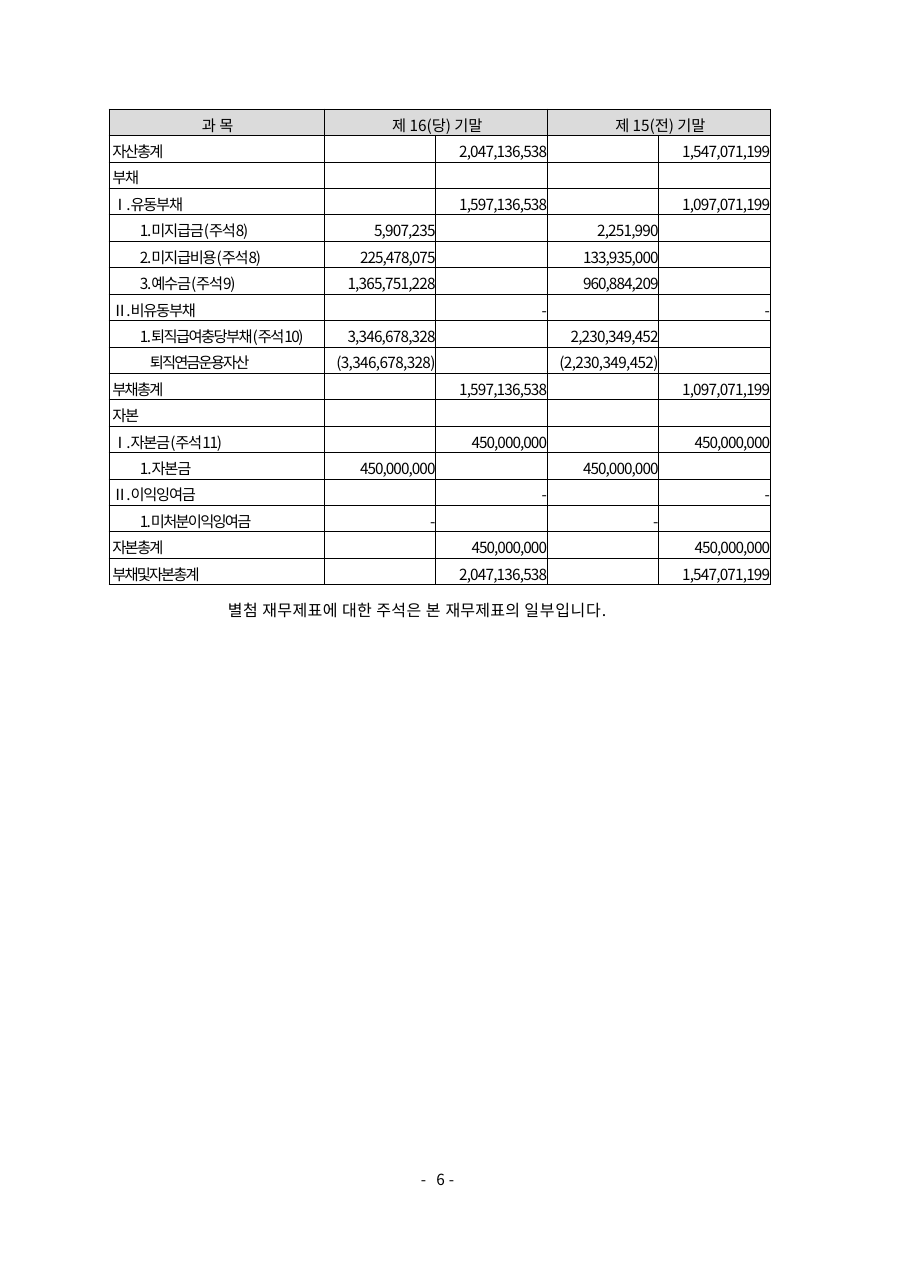
import pptx
import pptx.dml.color
import pptx.enum.text
import pptx.oxml.ns
import pptx.util
import lxml.etree

Inches = pptx.util.Inches
Pt = pptx.util.Pt
Align = pptx.enum.text.PP_ALIGN
qn = pptx.oxml.ns.qn

# Content
FONT = "Noto Sans CJK KR"
BLACK = pptx.dml.color.RGBColor(0x00, 0x00, 0x00)
HEADER_GREY = pptx.dml.color.RGBColor(0xDB, 0xDB, 0xDB)

ACCOUNT_HEADING = "과 목"
PERIODS = [("6", "당"), ("5", "전")]

# Indent of each account level, in inches
TOTAL, ITEM, OFFSET = 0.03, 0.28, 0.37

# Account, level, letter spacing, current period, prior period
ACCOUNTS = [
    ("자산총계", TOTAL, -1.1, "2,047,136,538", "1,547,071,199"),
    ("부채", TOTAL, -0.8, "", ""),
    ("Ⅰ.유동부채", TOTAL, -0.8, "1,597,136,538", "1,097,071,199"),
    ("1.미지급금(주석8)", ITEM, -0.8, "5,907,235", "2,251,990"),
    ("2.미지급비용(주석8)", ITEM, -0.8, "225,478,075", "133,935,000"),
    ("3.예수금(주석9)", ITEM, -0.8, "1,365,751,228", "960,884,209"),
    ("Ⅱ.비유동부채", TOTAL, -0.8, "-", "-"),
    ("1.퇴직급여충당부채(주석10)", ITEM, -1, "3,346,678,328", "2,230,349,452"),
    ("퇴직연금운용자산", OFFSET, -1.2, "(3,346,678,328)", "(2,230,349,452)"),
    ("부채총계", TOTAL, -1.1, "1,597,136,538", "1,097,071,199"),
    ("자본", TOTAL, -0.8, "", ""),
    ("Ⅰ.자본금(주석11)", TOTAL, -0.8, "450,000,000", "450,000,000"),
    ("1.자본금", ITEM, -0.7, "450,000,000", "450,000,000"),
    ("Ⅱ.이익잉여금", TOTAL, -0.8, "-", "-"),
    ("1.미처분이익잉여금", ITEM, -1.1, "-", "-"),
    ("자본총계", TOTAL, -1.1, "450,000,000", "450,000,000"),
    ("부채및자본총계", TOTAL, -1.2, "2,047,136,538", "1,547,071,199"),
]
AMOUNT_SPACING = {1: 0, 11: -0.6, 15: -0.4}  # by length of the amount
USUAL_AMOUNT_SPACING = -0.5

NOTE = [("별첨 재무제표에 대한 주석은 본 ", 0.3), ("재무제표의 ", 0.2), ("일부입니다.", 0.5)]
PAGE_NUMBER = [("- ", 2.2), ("6 ", 0.2), ("-", 2.2)]

# Layout
TABLE_LEFT, TABLE_TOP, TABLE_WIDTH, TABLE_HEIGHT = 0.99, 0.99, 6, 4.32
ACCOUNT_WIDTH = 1.95
AMOUNT_WIDTH = (TABLE_WIDTH - ACCOUNT_WIDTH) / 4
ROW_COUNT = len(ACCOUNTS) + 1
COLUMN_COUNT = 5


def write(para, spans, size=10, indent=0, before=0, align=Align.LEFT):
    para.alignment = align
    para.space_before = Pt(before)
    properties = para._p.get_or_add_pPr()
    properties.set("marL", str(Inches(indent)))
    properties.set("indent", "0")
    for text, spacing in spans:
        span = para.add_run()
        span.text = text
        span.font.size = Pt(size)
        span.font.name = FONT
        span.font.color.rgb = BLACK
        run_properties = span._r.get_or_add_rPr()
        run_properties.set("spc", str(round(spacing * 100)))
        for script in ("a:ea", "a:cs"):
            lxml.etree.SubElement(run_properties, qn(script)).set("typeface", FONT)


def write_cell(cell, spans, indent=0, align=Align.LEFT):
    write(cell.text_frame.paragraphs[0], spans, indent=indent, before=2.7, align=align)


def add_text(page, left, top, width, height, inset_top, spans, size, before):
    box = page.shapes.add_textbox(Inches(left), Inches(top), Inches(width), Inches(height))
    frame = box.text_frame
    frame.word_wrap = True
    frame.auto_size = pptx.enum.text.MSO_AUTO_SIZE.SHAPE_TO_FIT_TEXT
    frame.margin_left = frame.margin_right = frame.margin_bottom = 0
    frame.margin_top = Inches(inset_top)
    write(frame.paragraphs[0], spans, size=size, indent=0.01, before=before)
    return frame.paragraphs[0]


def format_cell(cell, is_header):
    cell.margin_left = cell.margin_right = cell.margin_bottom = 0
    cell.margin_top = Inches(0.04)
    properties = cell._tc.get_or_add_tcPr()
    for side in ("a:lnL", "a:lnR", "a:lnT", "a:lnB"):
        border = lxml.etree.SubElement(properties, qn(side), w=str(Pt(0.5)))
        fill = lxml.etree.SubElement(border, qn("a:solidFill"))
        lxml.etree.SubElement(fill, qn("a:srgbClr"), val=str(BLACK))
    if is_header:
        cell.fill.solid()
        cell.fill.fore_color.rgb = HEADER_GREY
    else:
        cell.fill.background()
    # Keep empty cells as low as filled ones
    paragraph = cell.text_frame.paragraphs[0]._p
    if not cell.text_frame.text:
        lxml.etree.SubElement(paragraph, qn("a:endParaRPr"), sz="1000")


def add_balance_table(page):
    frame = page.shapes.add_table(
        ROW_COUNT, COLUMN_COUNT, Inches(TABLE_LEFT), Inches(TABLE_TOP),
        Inches(TABLE_WIDTH), Inches(TABLE_HEIGHT))
    table = frame.table
    table.first_row = False
    table.horz_banding = False
    for index, column in enumerate(table.columns):
        column.width = Inches(AMOUNT_WIDTH if index else ACCOUNT_WIDTH)
    for row in table.rows:
        row.height = Inches(TABLE_HEIGHT / ROW_COUNT)

    # Header: each period spans a detail and a total column
    write_cell(table.cell(0, 0), [(ACCOUNT_HEADING, 0)], indent=0.02, align=Align.CENTER)
    for index, (digit, term) in enumerate(PERIODS):
        first = 1 + 2 * index
        table.cell(0, first).merge(table.cell(0, first + 1))
        spans = [("제 ", 0), ("1", -1.1), (digit, -1.2), ("(", -0.2),
                 (term, -1.4), (") ", 0), ("기", -1.4), ("말", 0)]
        write_cell(table.cell(0, first), spans, indent=0.62)

    # Accounts: totals go in the right column of a period, details in the left
    for row, (account, level, spacing, *amounts) in enumerate(ACCOUNTS, start=1):
        write_cell(table.cell(row, 0), [(account, spacing)], indent=level)
        for index, amount in enumerate(amounts):
            if amount:
                column = 1 + 2 * index + (level == TOTAL)
                tightness = AMOUNT_SPACING.get(len(amount), USUAL_AMOUNT_SPACING)
                write_cell(table.cell(row, column), [(amount, tightness)], align=Align.RIGHT)

    for row in range(ROW_COUNT):
        for column in range(COLUMN_COUNT):
            format_cell(table.cell(row, column), is_header=row == 0)


def main():
    deck = pptx.Presentation()
    deck.slide_width = Inches(8.26)
    deck.slide_height = Inches(11.69)
    page = deck.slides.add_slide(deck.slide_layouts[6])

    number = add_text(page, 3.81, 10.63, 0.42, 0.17, 0, PAGE_NUMBER, size=10, before=0)
    number.line_spacing = Pt(11.7)
    add_balance_table(page)
    add_text(page, 2.06, 5.43, 3.83, 0.21, 0.02, NOTE, size=10.5, before=1.3)

    deck.save("out.pptx")


if __name__ == "__main__":
    main()
